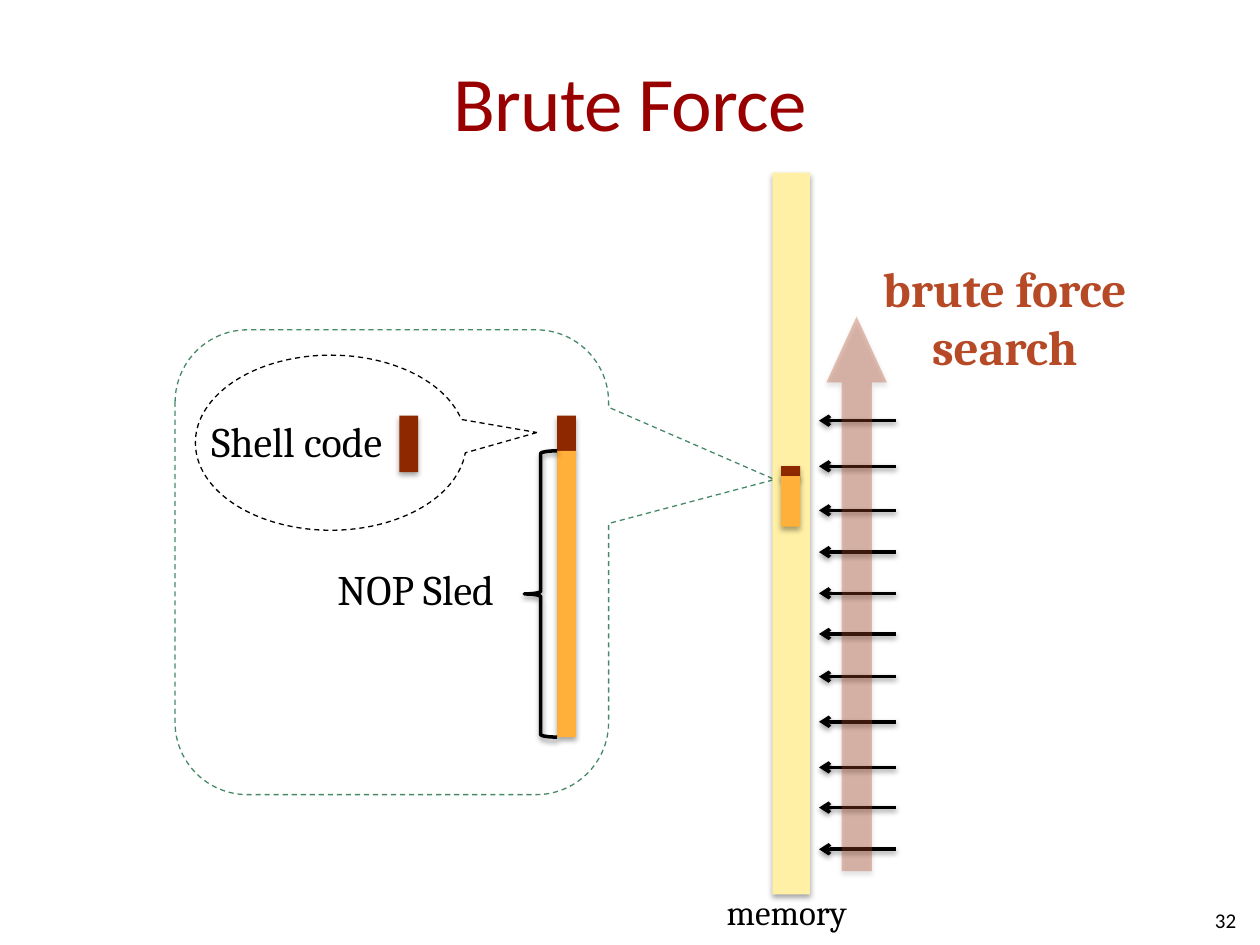
"""Build the brute force search slide."""
import dataclasses

import lxml.etree
import pptx
import pptx.dml.color
import pptx.enum.dml
import pptx.enum.shapes
import pptx.enum.text
import pptx.oxml.ns
import pptx.util

Cm = pptx.util.Cm
Pt = pptx.util.Pt
SHAPE = pptx.enum.shapes.MSO_SHAPE
ALIGN = pptx.enum.text.PP_ALIGN
MIDDLE = pptx.enum.text.MSO_ANCHOR.MIDDLE


@dataclasses.dataclass(frozen=True)
class Theme:
    """Hold the colours, fonts and sizes of the slide."""
    title: str = "990000"
    ink: str = "000000"
    shell: str = "8E2800"
    sled: str = "FFB03B"
    memory: str = "FFF0A5"
    zoom: str = "468966"
    search: str = "B64926"
    heading_font: str = "Calibri"
    body_font: str = "Cambria"
    title_size: float = 44
    search_size: float = 28
    label_size: float = 24
    memory_size: float = 20
    number_size: float = 12
    thin: float = 0.75
    thick: float = 2


def rgb(value):
    """Return the colour for a hex string."""
    return pptx.dml.color.RGBColor.from_string(value)


def add_element(parent, tag, **attributes):
    """Append a drawing element with the given attributes."""
    element = lxml.etree.SubElement(parent, pptx.oxml.ns.qn(tag))
    for name, value in attributes.items():
        element.set(name, str(value))
    return element


def write_text(frame, text, font, size, color, bold=False, align=ALIGN.LEFT, spacing=0):
    """Write each line of the text as one formatted paragraph."""
    for index, line in enumerate(text.split("\n")):
        para = frame.paragraphs[0] if index == 0 else frame.add_paragraph()
        para.alignment = align
        span = para.add_run()
        span.text = line
        span.font.name = font
        span.font.size = Pt(size)
        span.font.bold = bold
        span.font.color.rgb = rgb(color)
        if spacing:
            span.font._element.set("spc", str(spacing))


class Painter:
    """Draw styled elements on the current slide."""

    def __init__(self, page, theme):
        """Keep the slide and its theme."""
        self.page = page
        self.theme = theme

    def title(self, text, *place):
        """Move and fill the title placeholder."""
        box = self.page.shapes.title
        box.left, box.top, box.width, box.height = map(Cm, place)
        frame = box.text_frame
        frame.margin_left = frame.margin_right = 0
        frame.vertical_anchor = MIDDLE
        write_text(frame, text, self.theme.heading_font, self.theme.title_size,
                   self.theme.title, align=ALIGN.CENTER, spacing=-50)

    def label(self, text, *place, size, color=None, font=None, wrap=False, anchor=None, **style):
        """Add a text box."""
        frame = self.page.shapes.add_textbox(*map(Cm, place)).text_frame
        frame.word_wrap = wrap
        frame.vertical_anchor = anchor
        write_text(frame, text, font or self.theme.body_font, size,
                   color or self.theme.ink, **style)

    def shadow(self, properties, alpha=35, distance=1.8):
        """Add a soft shadow below an element."""
        effects = properties.find(pptx.oxml.ns.qn("a:effectLst"))
        if effects is None:
            effects = add_element(properties, "a:effectLst")
        outer = add_element(effects, "a:outerShdw", blurRad=Pt(3.1), dist=Pt(distance),
                            dir=5400000, rotWithShape=0)
        color = add_element(outer, "a:srgbClr", val=self.theme.ink)
        add_element(color, "a:alpha", val=alpha * 1000)

    def shape(self, kind, *place, adjust=()):
        """Add a bare preset shape."""
        box = self.page.shapes.add_shape(kind, *map(Cm, place))
        box.shadow.inherit = False
        for index, value in enumerate(adjust):
            box.adjustments[index] = value
        return box

    def block(self, kind, *place, color, opacity=None, adjust=()):
        """Add a filled shape with a shadow."""
        box = self.shape(kind, *place, adjust=adjust)
        box.fill.solid()
        box.fill.fore_color.rgb = rgb(color)
        box.line.fill.background()
        if opacity is not None:
            fill = box._element.spPr.find(pptx.oxml.ns.qn("a:solidFill"))
            add_element(fill[0], "a:alpha", val=opacity * 1000)
        self.shadow(box._element.spPr)

    def callout(self, kind, *place, color, adjust):
        """Add a dashed callout."""
        box = self.shape(kind, *place, adjust=adjust)
        box.fill.background()
        box.line.color.rgb = rgb(color)
        box.line.width = Pt(self.theme.thin)
        box.line.dash_style = pptx.enum.dml.MSO_LINE.DASH

    def brace(self, *place):
        """Add a left brace."""
        box = self.shape(SHAPE.LEFT_BRACE, *place)
        box.fill.background()
        box.line.color.rgb = rgb(self.theme.ink)
        box.line.width = Pt(self.theme.thick)
        self.shadow(box._element.spPr, alpha=38, distance=1.6)

    def arrow(self, *ends):
        """Add a line with an arrowhead at its end."""
        kind = pptx.enum.shapes.MSO_CONNECTOR.STRAIGHT
        line = self.page.shapes.add_connector(kind, *map(Cm, ends))
        line.line.color.rgb = rgb(self.theme.ink)
        line.line.width = Pt(self.theme.thick)
        add_element(line.line._get_or_add_ln(), "a:tailEnd", type="arrow")
        self.shadow(line._element.spPr, alpha=38, distance=1.6)


def main():
    """Build and save the deck."""
    deck = pptx.Presentation()
    deck.slide_width, deck.slide_height = Cm(25.4), Cm(19.05)
    theme = Theme()
    painter = Painter(deck.slides.add_slide(deck.slide_layouts[5]), theme)

    painter.title("Brute Force", 1.27, 0.43, 22.86, 3.18)

    painter.block(SHAPE.RECTANGLE, 8.05, 8.38, 0.38, 1.14, color=theme.shell)
    painter.label("Shell code", 4.01, 8.26, 4.19, 1.27, size=theme.label_size)
    painter.callout(SHAPE.OVAL_CALLOUT, 3.94, 7.16, 5.46, 3.53,
                    color=theme.ink, adjust=(0.761, -0.058))
    painter.block(SHAPE.RECTANGLE, 11.23, 8.38, 0.38, 0.71, color=theme.shell)
    painter.block(SHAPE.RECTANGLE, 11.23, 9.09, 0.38, 5.77, color=theme.sled)
    painter.brace(10.57, 9.09, 0.66, 5.77)
    painter.label("NOP Sled", 6.55, 11.23, 3.89, 1.27, size=theme.label_size)

    painter.callout(SHAPE.ROUNDED_RECTANGULAR_CALLOUT, 3.53, 6.65, 8.74, 9.37,
                    color=theme.zoom, adjust=(0.883, -0.178, 0.167))
    painter.block(SHAPE.RECTANGLE, 15.57, 3.48, 0.76, 14.55, color=theme.memory)
    painter.block(SHAPE.RECTANGLE, 15.75, 9.4, 0.38, 0.28, color=theme.shell)
    painter.label("memory", 14.4, 17.83, 3.07, 1.12, size=theme.memory_size)
    painter.block(SHAPE.RECTANGLE, 15.75, 9.6, 0.38, 1.02, color=theme.sled)

    guesses = (17.12, 16.28, 15.47, 14.55, 13.64, 12.78, 11.96, 11.13, 10.29, 9.4, 8.48)
    for height in guesses:
        painter.arrow(18.06, height, 16.51, height)
    painter.block(SHAPE.UP_ARROW, 16.66, 6.38, 1.22, 11.18,
                  color=theme.search, opacity=33, adjust=(0.5, 1.091))
    painter.label("brute force\nsearch", 17.45, 5.08, 5.61, 2.64, size=theme.search_size,
                  color=theme.search, bold=True, align=ALIGN.CENTER)

    painter.label("32", 19.25, 18.03, 5.92, 1.02, size=theme.number_size,
                  font=theme.heading_font, wrap=True, anchor=MIDDLE, align=ALIGN.RIGHT)

    deck.save("out.pptx")


if __name__ == "__main__":
    main()
